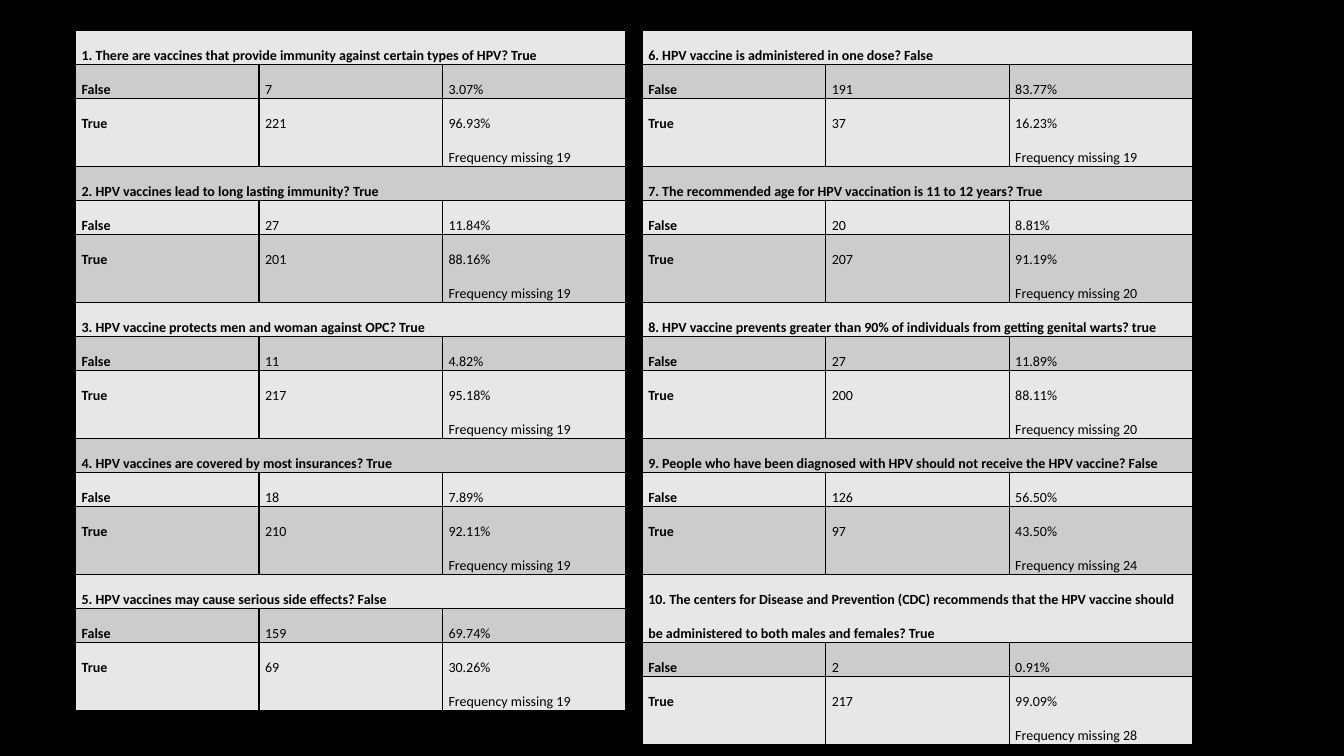
"""Build a slide with two tables of HPV vaccine survey answers."""
import lxml.etree
import pptx
import pptx.dml.color
import pptx.oxml.ns
import pptx.util

Inches = pptx.util.Inches
Pt = pptx.util.Pt


def rgb(value):
    return pptx.dml.color.RGBColor.from_string(value)


def add_border(tcPr, index, side):
    ln = lxml.etree.Element(pptx.oxml.ns.qn(f"a:{side}"), w=str(Pt(1)))
    fill = lxml.etree.SubElement(ln, pptx.oxml.ns.qn("a:solidFill"))
    lxml.etree.SubElement(fill, pptx.oxml.ns.qn("a:srgbClr"), val="000000")
    tcPr.insert(index, ln)


left_questions = [
    ("1. There are vaccines that provide immunity against certain types of HPV? True",
     "7", "3.07%", "221", "96.93%", 19),
    ("2. HPV vaccines lead to long lasting immunity? True",
     "27", "11.84%", "201", "88.16%", 19),
    ("3. HPV vaccine protects men and woman against OPC? True",
     "11", "4.82%", "217", "95.18%", 19),
    ("4. HPV vaccines are covered by most insurances? True",
     "18", "7.89%", "210", "92.11%", 19),
    ("5. HPV vaccines may cause serious side effects? False",
     "159", "69.74%", "69", "30.26%", 19),
]
right_questions = [
    ("6. HPV vaccine is administered in one dose? False",
     "191", "83.77%", "37", "16.23%", 19),
    ("7. The recommended age for HPV vaccination is 11 to 12 years? True",
     "20", "8.81%", "207", "91.19%", 20),
    ("8. HPV vaccine prevents greater than 90% of individuals from getting genital warts? true",
     "27", "11.89%", "200", "88.11%", 20),
    ("9. People who have been diagnosed with HPV should not receive the HPV vaccine? False",
     "126", "56.50%", "97", "43.50%", 24),
    ("10. The centers for Disease and Prevention (CDC) recommends that the HPV vaccine "
     "should be administered to both males and females? True",
     "2", "0.91%", "217", "99.09%", 28),
]
tables = [
    (0.75, left_questions, [0.31, 0.31, 0.66] * 5),
    (6.37, right_questions, [0.29, 0.29, 0.63] * 4 + [0.63, 0.29, 0.63]),
]
bands = ["E7E7E7", "CCCCCC"]
margins = {
    "margin_left": Inches(0.06),
    "margin_right": Inches(0.06),
    "margin_top": 0,
    "margin_bottom": 0,
}
font_format = {"name": "Calibri", "size": Pt(10)}

prs = pptx.Presentation()
prs.slide_width = Inches(13.33)
prs.slide_height = Inches(7.5)
s = prs.slides.add_slide(prs.slide_layouts[6])
s.background.fill.solid()
s.background.fill.fore_color.rgb = rgb("000000")

for left, questions, heights in tables:
    rows = []
    for question, false_n, false_pct, true_n, true_pct, missing in questions:
        rows.append([question, "", ""])
        rows.append(["False", false_n, false_pct])
        rows.append(["True", true_n, f"{true_pct}\nFrequency missing {missing}"])

    tbl = s.shapes.add_table(
        len(rows), 3, Inches(left), Inches(0.3), Inches(5.46), Inches(6.36)
    ).table
    for col in tbl.columns:
        col.width = Inches(1.82)

    for i, (texts, height) in enumerate(zip(rows, heights)):
        tbl.rows[i].height = Inches(height)
        if i % 3 == 0:
            tbl.cell(i, 0).merge(tbl.cell(i, 2))
        for j, text in enumerate(texts):
            cell = tbl.cell(i, j)
            for name, value in margins.items():
                setattr(cell, name, value)
            cell.fill.solid()
            cell.fill.fore_color.rgb = rgb(bands[i % 2])
            for k, side in enumerate(["lnL", "lnR", "lnT", "lnB"]):
                add_border(cell.fill._xPr, k, side)
            cell.text = text
            for p in cell.text_frame.paragraphs:
                p.line_spacing = 2.0
                for r in p.runs:
                    for name, value in font_format.items():
                        setattr(r.font, name, value)
                    r.font.bold = j == 0
                    r.font.color.rgb = rgb("000000")

prs.save("out.pptx")
